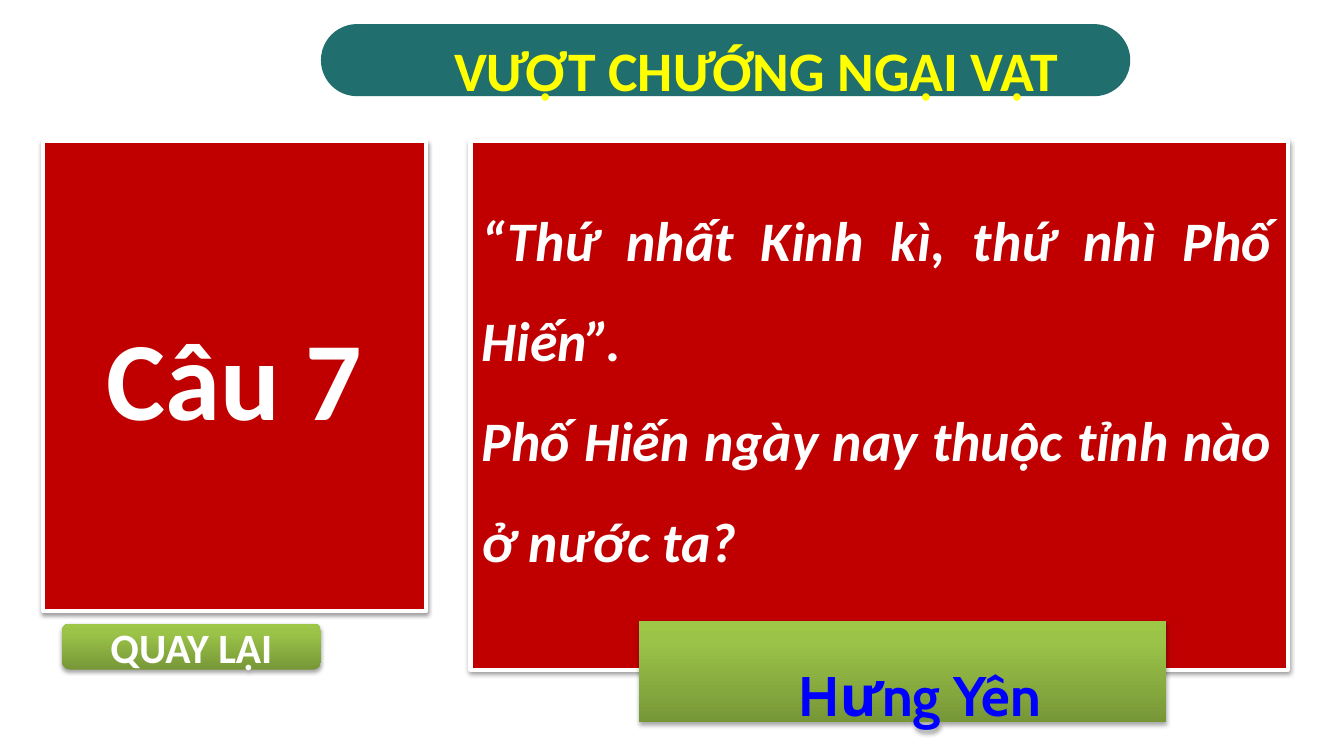
import copy
import dataclasses

import pptx
import pptx.dml.color
import pptx.enum.shapes
import pptx.enum.text
import pptx.oxml
import pptx.oxml.ns
import pptx.util

Pt = pptx.util.Pt
Align = pptx.enum.text.PP_ALIGN
Anchor = pptx.enum.text.MSO_ANCHOR
Preset = pptx.enum.shapes.MSO_SHAPE


@dataclasses.dataclass(frozen=True)
class Theme:
    teal: str = "206E6E"
    red: str = "C00000"
    white: str = "FFFFFF"
    yellow: str = "FFFF00"
    blue: str = "0000FF"
    shadow: str = "000000"
    greens: tuple = ((0, "779737"), (0.8, "9BC348"), (1, "9DC746"))
    font: str = "Calibri"
    answer_font: str = "Cabin"
    button_size: int = 30
    text_size: int = 40
    number_size: int = 80


THEME = Theme()


def rgb(value):
    return pptx.dml.color.RGBColor.from_string(value)


def set_all(target, values):
    for name, value in values.items():
        setattr(target, name, value)


def set_place(box, place):
    set_all(box, dict(zip(("left", "top", "width", "height"), map(Pt, place))))


# Fills and shadows
def fill_green(box):
    box.fill.gradient()
    box.fill.gradient_angle = 90
    stops = box.element.spPr.find(".//" + pptx.oxml.ns.qn("a:gsLst"))
    stops.append(copy.deepcopy(stops[-1]))
    for stop, (position, color) in zip(box.fill.gradient_stops, THEME.greens):
        stop.position = position
        stop.color.rgb = rgb(color)


def add_shadow(box, opacity, distance):
    effects = box.element.spPr.find(pptx.oxml.ns.qn("a:effectLst"))
    effects.append(pptx.oxml.parse_xml(
        f'<a:outerShdw {pptx.oxml.ns.nsdecls("a")} blurRad="{Pt(3.1)}" '
        f'dist="{Pt(distance)}" dir="5400000" rotWithShape="0">'
        f'<a:srgbClr val="{THEME.shadow}"><a:alpha val="{opacity * 1000}"/>'
        '</a:srgbClr></a:outerShdw>'))


# Shapes
def add_box(page, preset, place):
    box = page.shapes.add_shape(preset, *map(Pt, place))
    box.shadow.inherit = False
    box.line.fill.background()
    return box


def add_red_panel(page, place):
    panel = add_box(page, Preset.RECTANGLE, place)
    panel.fill.solid()
    panel.fill.fore_color.rgb = rgb(THEME.red)
    panel.line.color.rgb = rgb(THEME.white)
    panel.line.width = Pt(3)
    add_shadow(panel, 38, 1.6)
    return panel


def add_green_box(page, preset, place):
    box = add_box(page, preset, place)
    fill_green(box)
    add_shadow(box, 35, 1.8)
    return box


def add_banner(page, place):
    banner = add_box(page, Preset.ROUNDED_RECTANGLE, place)
    banner.adjustments[0] = 0.5
    banner.fill.solid()
    banner.fill.fore_color.rgb = rgb(THEME.teal)


# Text
def write(box, lines, size, color, font=THEME.font, align=Align.CENTER,
          anchor=Anchor.MIDDLE, spacing=1.0, indent=0, italic=False,
          insets=(9.4, 5)):
    across, down = map(Pt, insets)
    frame = box.text_frame
    set_all(frame, {
        "word_wrap": True, "auto_size": pptx.enum.text.MSO_AUTO_SIZE.NONE,
        "vertical_anchor": anchor, "margin_left": across,
        "margin_right": across, "margin_top": down, "margin_bottom": down})
    for index, line in enumerate(lines):
        para = frame.add_paragraph() if index else frame.paragraphs[0]
        set_all(para, {"alignment": align, "line_spacing": spacing,
                       "space_before": Pt(0), "space_after": Pt(0)})
        properties = para._p.get_or_add_pPr()
        properties.set("marL", str(Pt(indent)))
        properties.set("indent", "0")
        properties.append(pptx.oxml.parse_xml(
            f'<a:buNone {pptx.oxml.ns.nsdecls("a")}/>'))
        span = para.add_run()
        span.text = line
        set_all(span.font, {"name": font, "size": Pt(size), "bold": True,
                            "italic": italic})
        span.font.color.rgb = rgb(color)


def place_in_front(holder, place):
    set_place(holder, place)
    holder.element.getparent().append(holder.element)


def main():
    deck = pptx.Presentation()
    set_all(deck, {"slide_width": Pt(964.8), "slide_height": Pt(540)})
    page = deck.slides.add_slide(deck.slide_layouts[1])
    title, question = page.shapes.title, page.placeholders[1]

    # Back button and question number
    button = add_green_box(page, Preset.ROUNDED_RECTANGLE,
                           (44.6, 447.8, 185.8, 33.1))
    write(button, ["QUAY LẠI"], THEME.button_size, THEME.white)
    number = add_red_panel(page, (31, 101.5, 275, 337))
    write(number, ["Câu 7"], THEME.number_size, THEME.white)
    add_red_panel(page, (337.7, 101.5, 586.8, 379.4))

    # Title on its banner
    add_banner(page, (230.4, 17.3, 581, 51.8))
    place_in_front(title, (242.6, -2.2, 552.2, 79.9))
    write(title, ["VƯỢT CHƯỚNG NGẠI VẬT"], THEME.text_size, THEME.yellow,
          anchor=Anchor.TOP, spacing=1.5, indent=48, insets=(7.2, 3.6))

    # Answer
    answer = add_green_box(page, Preset.RECTANGLE,
                           (458.6, 445.7, 378.7, 72.7))
    write(answer, ["Hưng Yên"], THEME.text_size, THEME.blue,
          font=THEME.answer_font, anchor=Anchor.TOP, spacing=1.5, indent=25)

    # Question
    place_in_front(question, (338.4, 120.2, 581.8, 298))
    write(question, ["“Thứ nhất Kinh kì, thứ nhì Phố Hiến”.",
                     "Phố Hiến ngày nay thuộc tỉnh nào ở nước ta?"],
          THEME.text_size, THEME.white, align=Align.JUSTIFY,
          anchor=Anchor.TOP, spacing=1.5, italic=True, insets=(7.2, 3.6))

    deck.save("out.pptx")


if __name__ == "__main__":
    main()
